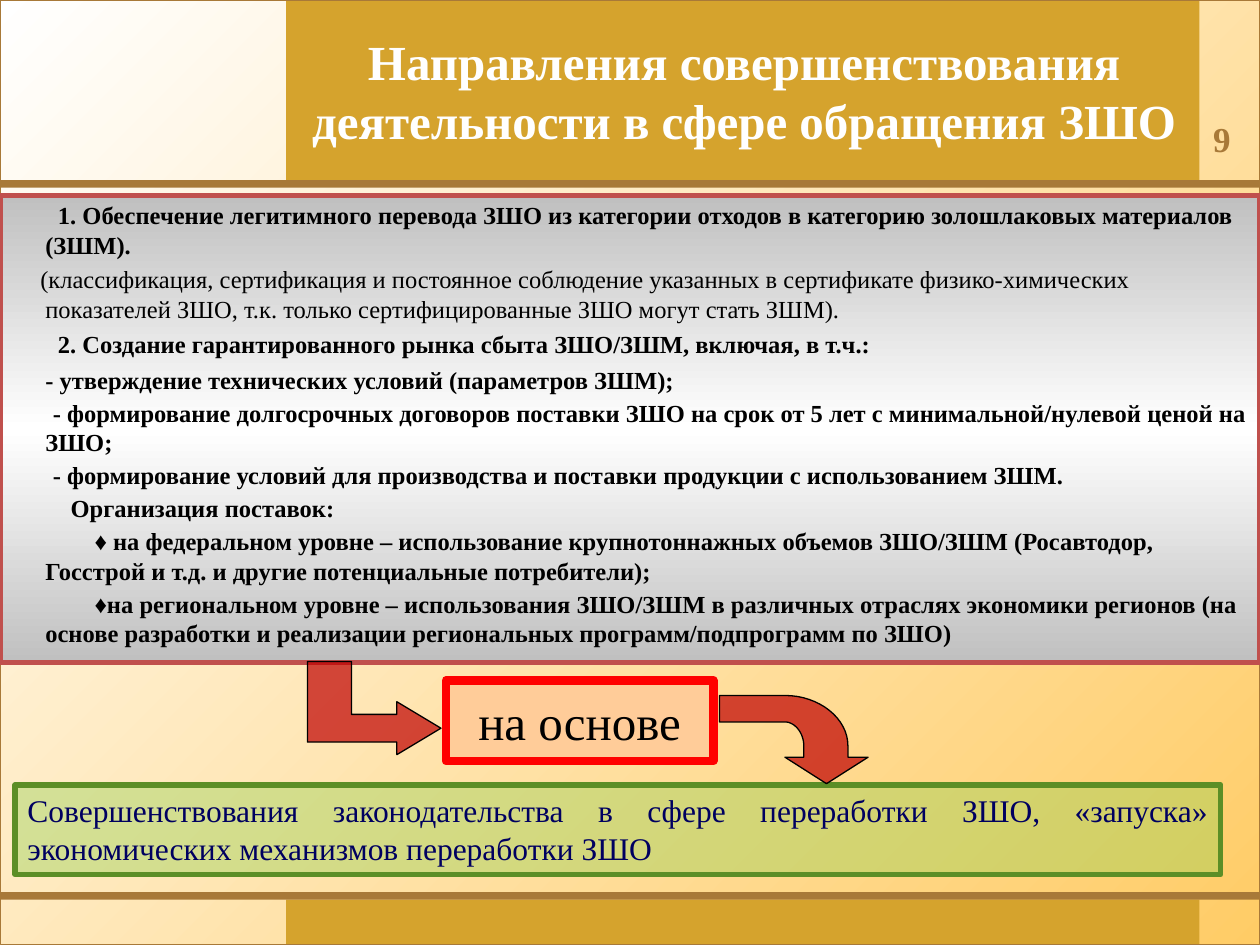
from lxml.etree import SubElement
from pptx import Presentation
from pptx.dml.color import RGBColor
from pptx.enum.shapes import MSO_SHAPE
from pptx.enum.text import MSO_ANCHOR, MSO_AUTO_SIZE, PP_ALIGN
from pptx.oxml.ns import qn
from pptx.util import Inches, Pt

FONT = "Times New Roman"
COLORS = {
    "white": "FFFFFF", "black": "000000", "sand": "FFCC66", "gold": "D5A32D",
    "brown": "A87938", "silver": "C0C0C0", "brick": "C0504D", "peach": "FFCC99",
    "red": "FF0000", "lime": "92D050", "green": "5C8E26", "navy": "000060",
    "arrow": "C00000",
}
# Text, bold, first-line offset from the text margin (inches), space before (points)
DIRECTIONS = [
    ("1. Обеспечение легитимного перевода ЗШО из категории отходов в категорию "
     "золошлаковых материалов (ЗШМ).", True, 0.1, 0),
    ("(классификация, сертификация и постоянное соблюдение указанных в сертификате "
     "физико-химических показателей ЗШО, т.к. только сертифицированные ЗШО могут "
     "стать ЗШМ).", False, -0.04, 2.8),
    ("2. Создание гарантированного рынка сбыта ЗШО/ЗШМ, включая, в т.ч.:", True, 0.1, 3.5),
    ("- утверждение технических условий (параметров ЗШМ);", True, 0, 3.5),
    ("- формирование долгосрочных договоров поставки ЗШО на срок от 5 лет с "
     "минимальной/нулевой ценой на ЗШО;", True, 0.06, 2.1),
    ("- формирование условий для производства и поставки продукции с использованием "
     "ЗШМ.", True, 0.06, 2.1),
    ("Организация поставок:", True, 0.2, 2.1),
    ("♦ на федеральном уровне – использование крупнотоннажных объемов ЗШО/ЗШМ "
     "(Росавтодор, Госстрой и т.д. и другие потенциальные потребители);", True, 0.39, 2.1),
    ("♦на региональном уровне – использования ЗШО/ЗШМ в различных отраслях экономики "
     "регионов (на основе разработки и реализации региональных программ/подпрограмм "
     "по ЗШО)", True, 0.39, 2.1),
]


def rgb(name):
    return RGBColor.from_string(COLORS[name])


def set_gradient(fill, element, names, angle):
    """Fill with evenly spaced colours; the angle runs clockwise in degrees."""
    fill.gradient()
    fill.gradient_angle = 360 - angle
    stops = next(element.iter(qn("a:gsLst")))
    stops.clear()
    for index, name in enumerate(names):
        position = str(100000 * index // (len(names) - 1))
        stop = SubElement(stops, qn("a:gs"), pos=position)
        SubElement(stop, qn("a:srgbClr"), val=COLORS[name])


def style_shape(shape, fill=None, line=None, width=1, opacity=100):
    shape.shadow.inherit = False
    if fill:
        shape.fill.solid()
        shape.fill.fore_color.rgb = rgb(fill)
        if opacity < 100:
            color = shape._element.spPr.find(qn("a:solidFill"))[0]
            SubElement(color, qn("a:alpha"), val=str(opacity * 1000))
    else:
        shape.fill.background()
    if line:
        shape.line.color.rgb = rgb(line)
        shape.line.width = Pt(width)
    else:
        shape.line.fill.background()


def add_box(slide, box, **style):
    shape = slide.shapes.add_shape(MSO_SHAPE.RECTANGLE, *map(Inches, box))
    style_shape(shape, **style)
    return shape


def format_font(font, size, color, bold=False):
    values = {"name": FONT, "size": Pt(size), "bold": bold}
    for name, value in values.items():
        setattr(font, name, value)
    font.color.rgb = rgb(color)


def format_frame(frame, anchor=MSO_ANCHOR.TOP, wrap=True, margins=(0.1, 0.05)):
    side, end = map(Inches, margins)
    values = {
        "auto_size": MSO_AUTO_SIZE.NONE, "vertical_anchor": anchor, "word_wrap": wrap,
        "margin_left": side, "margin_right": side, "margin_top": end, "margin_bottom": end,
    }
    for name, value in values.items():
        setattr(frame, name, value)


def write_text(shape, text, size, color, align, bold=False, **frame_values):
    format_frame(shape.text_frame, **frame_values)
    paragraph = shape.text_frame.paragraphs[0]
    paragraph.alignment = align
    run = paragraph.add_run()
    run.text = text
    format_font(run.font, size, color, bold)


def place_on_top(slide, placeholder, box):
    sides = ("left", "top", "width", "height")
    for name, value in zip(sides, box):
        setattr(placeholder, name, Inches(value))
    slide.shapes._spTree.append(placeholder._element)


def write_directions(frame):
    format_frame(frame, margins=(0.08, 0.04))
    for index, (text, bold, offset, space) in enumerate(DIRECTIONS):
        paragraph = frame.paragraphs[0] if index == 0 else frame.add_paragraph()
        properties = paragraph._p.get_or_add_pPr()
        properties.set("marL", str(Inches(0.28)))
        properties.set("indent", str(Inches(offset)))
        SubElement(properties, qn("a:buNone"))
        paragraph.space_before = Pt(space)
        run = paragraph.add_run()
        run.text = text
        format_font(run.font, 14, "black", bold)


def curve(start, first, second, end, steps=16):
    """Points of a cubic curve, without its start."""
    points = []
    for step in range(1, steps + 1):
        t = step / steps
        weights = ((1 - t) ** 3, 3 * t * (1 - t) ** 2, 3 * t * t * (1 - t), t ** 3)
        points.append(tuple(
            sum(weight * value for weight, value in zip(weights, axis))
            for axis in zip(start, first, second, end)))
    return points


def add_arrow(slide, points):
    corners = [(Inches(x), Inches(y)) for x, y in points]
    builder = slide.shapes.build_freeform(*corners[0])
    builder.add_line_segments(corners[1:], close=True)
    style_shape(builder.convert_to_shape(), fill="arrow", line="black", width=0.75, opacity=70)


def add_frame(slide):
    for top, height in ((7.14, 0.36), (0, 1.43)):
        add_box(slide, (2.27, top, 7.25, height), fill="gold")
    for top in (1.43, 7.08):
        add_box(slide, (0, top, 10, 0.06), fill="brown")
    add_box(slide, (0, 0, 10, 7.5), line="brown", width=0.5)


def main():
    presentation = Presentation()
    presentation.slide_width, presentation.slide_height = Inches(10), Inches(7.5)
    slide = presentation.slides.add_slide(presentation.slide_layouts[1])
    set_gradient(slide.background.fill, slide._element, ("white", "sand"), 45)
    add_frame(slide)

    title, body = slide.shapes.title, slide.placeholders[1]
    place_on_top(slide, title, (2.27, 0.18, 7.27, 1.07))
    write_text(title, "Направления совершенствования деятельности в сфере обращения ЗШО",
               28, "white", PP_ALIGN.CENTER, bold=True,
               anchor=MSO_ANCHOR.MIDDLE, margins=(0.08, 0.04))
    place_on_top(slide, body, (0, 1.55, 10, 3.71))
    set_gradient(body.fill, body._element, ("silver", "white", "silver"), 90)
    body.line.color.rgb = rgb("brick")
    body.line.width = Pt(3)
    write_directions(body.text_frame)

    basis = add_box(slide, (3.54, 5.4, 2.12, 0.64), fill="peach", line="red", width=5)
    write_text(basis, "на основе", 28, "black", PP_ALIGN.CENTER, anchor=MSO_ANCHOR.MIDDLE)
    result = add_box(slide, (0.12, 6.23, 9.57, 0.71),
                     fill="lime", line="green", width=3, opacity=40)
    write_text(result, "Совершенствования законодательства в сфере переработки ЗШО, "
               "«запуска» экономических механизмов переработки ЗШО",
               18, "navy", PP_ALIGN.JUSTIFY)

    outer_bend = curve((6.73, 5.92), (6.73, 5.7), (6.5, 5.52), (6.23, 5.52))
    inner_bend = curve((6.23, 5.73), (6.31, 5.73), (6.38, 5.82), (6.38, 5.92))
    add_arrow(slide, [(6.56, 6.22), (6.89, 6.01), (6.73, 6.01), (6.73, 5.92), *outer_bend,
                      (5.71, 5.52), (5.71, 5.73), (6.23, 5.73), *inner_bend,
                      (6.38, 6.01), (6.23, 6.01)])
    add_arrow(slide, [(3.5, 5.78), (3.15, 5.57), (3.15, 5.67), (2.79, 5.67), (2.79, 5.25),
                      (2.44, 5.25), (2.44, 5.89), (3.15, 5.89), (3.15, 5.99)])

    number = slide.shapes.add_textbox(*map(Inches, (9.53, 0.88, 0.34, 0.44)))
    write_text(number, "9", 20, "brown", PP_ALIGN.LEFT, bold=True, wrap=False)
    presentation.save("out.pptx")


if __name__ == "__main__":
    main()
